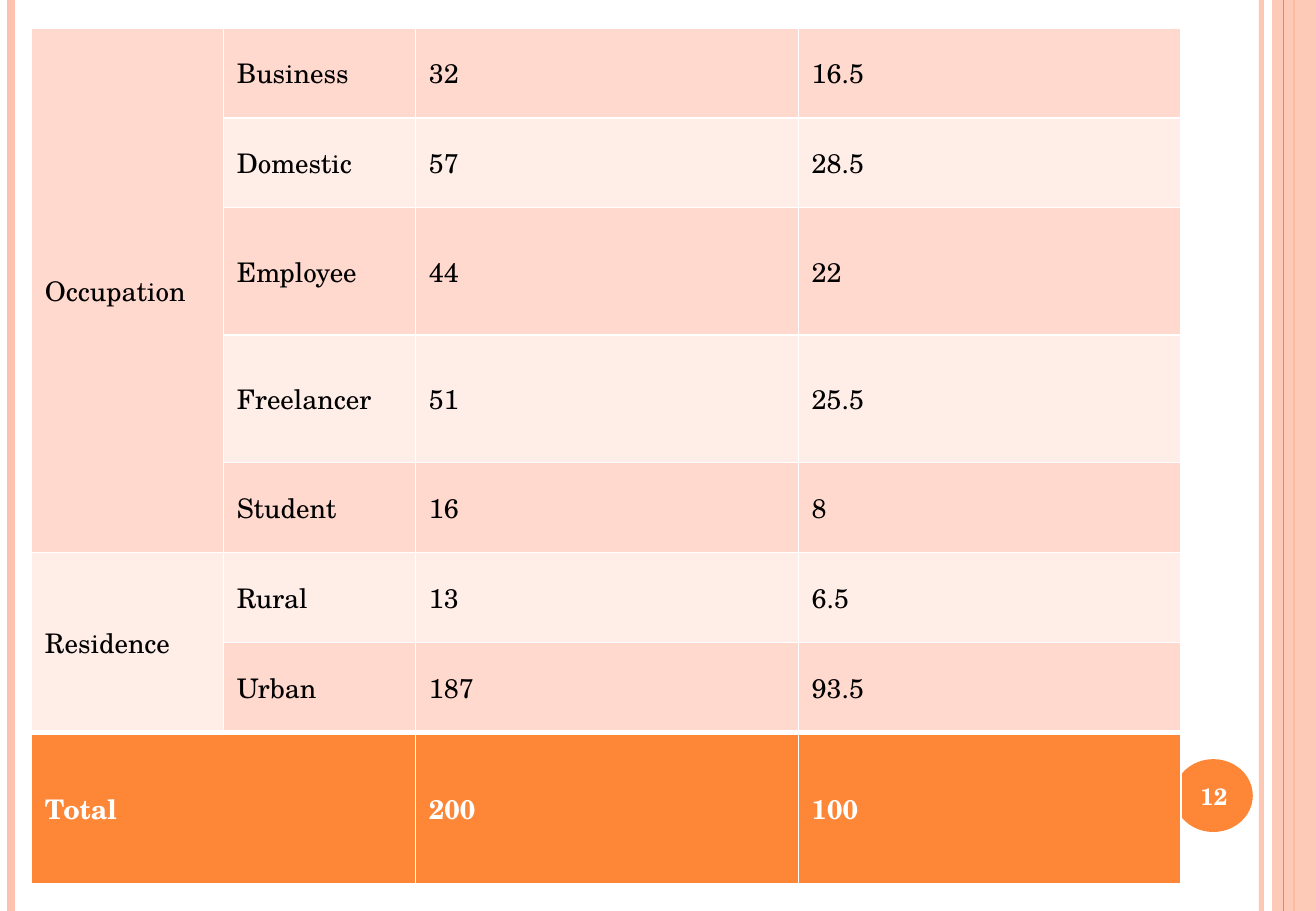
from dataclasses import dataclass

from lxml.etree import SubElement
from pptx import Presentation
from pptx.dml.color import RGBColor
from pptx.enum.shapes import MSO_CONNECTOR, MSO_SHAPE
from pptx.enum.text import MSO_ANCHOR, PP_ALIGN
from pptx.oxml.ns import qn
from pptx.slide import Slide
from pptx.table import _Cell
from pptx.util import Inches, Pt


@dataclass(frozen=True)
class Theme:
    font: str = "TeX Gyre Schola"
    body_size: int = 16
    number_size: int = 14
    accent: str = "FE8637"
    stripe: str = "FEC3AE"
    bands: tuple[str, str] = ("FFD9CE", "FFEDE8")
    ink: str = "000000"
    paper: str = "FFFFFF"


@dataclass(frozen=True)
class Rule:
    x: float
    color: str
    width: float
    opacity: int = 100


@dataclass(frozen=True)
class Block:
    shape: MSO_SHAPE
    box: tuple[float, float, float, float]
    color: str
    opacity: int = 100


THEME = Theme()
WIDTH, HEIGHT = 10.83, 7.5

BACKDROP = [
    Rule(10.38, THEME.stripe, 3, 93),
    Rule(0.09, THEME.stripe, 4.5),
    Rule(10.65, THEME.accent, 1.5),
    Block(MSO_SHAPE.RECTANGLE, (10.47, 0, 0.36, HEIGHT), THEME.stripe, 87),
    Rule(10.56, THEME.accent, 0.75),
    Block(MSO_SHAPE.OVAL, (9.66, 6.25, 0.65, 0.6), THEME.accent),
]

COLUMNS = [1.58, 1.58, 3.15, 3.15]
ROW_HEIGHTS = [0.74, 0.74, 1.05, 1.05, 0.74, 0.74, 0.74, 1.25]
ROWS = [
    ("Occupation", "Business", "32", "16.5"),
    ("", "Domestic", "57", "28.5"),
    ("", "Employee", "44", "22"),
    ("", "Freelancer", "51", "25.5"),
    ("", "Student", "16", "8"),
    ("Residence", "Rural", "13", "6.5"),
    ("", "Urban", "187", "93.5"),
    ("Total", "", "200", "100"),
]
MERGES = [((0, 0), (4, 0)), ((5, 0), (6, 0)), ((7, 0), (7, 1))]


def rgb(color: str) -> RGBColor:
    return RGBColor.from_string(color)


def set_opacity(element, percent: int) -> None:
    if percent < 100:
        for color in element.iter(qn("a:srgbClr")):
            SubElement(color, qn("a:alpha"), val=str(percent * 1000))


def add_rule(s: Slide, rule: Rule) -> None:
    x = Inches(rule.x)
    line = s.shapes.add_connector(MSO_CONNECTOR.STRAIGHT, x, 0, x, Inches(HEIGHT))
    line.line.color.rgb = rgb(rule.color)
    line.line.width = Pt(rule.width)
    props = line._element.spPr
    set_opacity(props, rule.opacity)
    SubElement(props, qn("a:effectLst"))


def add_block(s: Slide, block: Block) -> None:
    sp = s.shapes.add_shape(block.shape, *map(Inches, block.box))
    sp.shadow.inherit = False
    sp.fill.solid()
    sp.fill.fore_color.rgb = rgb(block.color)
    sp.line.fill.background()
    set_opacity(sp._element.spPr, block.opacity)


def add_page_number(s: Slide, number: str) -> None:
    sp = s.shapes.add_textbox(*map(Inches, (9.63, 6.27, 0.72, 0.57)))
    tf = sp.text_frame
    tf.word_wrap = True
    tf.vertical_anchor = MSO_ANCHOR.MIDDLE
    p = tf.paragraphs[0]
    p.text = number
    p.alignment = PP_ALIGN.CENTER
    p.font.name = THEME.font
    p.font.size = Pt(THEME.number_size)
    p.font.bold = True
    p.font.color.rgb = rgb(THEME.paper)


def set_borders(cell: _Cell, top: float) -> None:
    props = cell._tc.get_or_add_tcPr()
    for side, width in (("L", 1), ("R", 1), ("T", top), ("B", 1)):
        border = SubElement(props, qn(f"a:ln{side}"), w=str(Pt(width)))
        fill = SubElement(border, qn("a:solidFill"))
        SubElement(fill, qn("a:srgbClr"), val=THEME.paper)


def format_cell(cell: _Cell, text: str, band: str, is_total: bool) -> None:
    set_borders(cell, 3 if is_total else 1)
    cell.fill.solid()
    cell.fill.fore_color.rgb = rgb(THEME.accent if is_total else band)
    cell.vertical_anchor = MSO_ANCHOR.MIDDLE
    cell.margin_left = cell.margin_right = Inches(0.11)
    cell.margin_top = cell.margin_bottom = Inches(0.05)
    p = cell.text_frame.paragraphs[0]
    p.text = text
    p.alignment = PP_ALIGN.LEFT
    p.font.name = THEME.font
    p.font.size = Pt(THEME.body_size)
    p.font.bold = is_total
    p.font.color.rgb = rgb(THEME.paper if is_total else THEME.ink)


def add_frequency_table(s: Slide) -> None:
    frame = s.shapes.add_table(
        len(ROWS), len(COLUMNS), Inches(0.26), Inches(0.23),
        Inches(sum(COLUMNS)), Inches(sum(ROW_HEIGHTS)),
    )
    table = frame.table
    table.first_row = False
    table.horz_banding = False
    for column, width in zip(table.columns, COLUMNS):
        column.width = Inches(width)
    for i, (row, height, texts) in enumerate(zip(table.rows, ROW_HEIGHTS, ROWS)):
        row.height = Inches(height)
        for cell, text in zip(row.cells, texts):
            format_cell(cell, text, THEME.bands[i % 2], i == len(ROWS) - 1)
    for first, last in MERGES:
        table.cell(*first).merge(table.cell(*last))


def main() -> None:
    prs = Presentation()
    prs.slide_width, prs.slide_height = Inches(WIDTH), Inches(HEIGHT)
    s = prs.slides.add_slide(prs.slide_layouts[6])
    for item in BACKDROP:
        if isinstance(item, Rule):
            add_rule(s, item)
        else:
            add_block(s, item)
    add_page_number(s, "12")
    add_frequency_table(s)
    prs.save("out.pptx")


if __name__ == "__main__":
    main()
